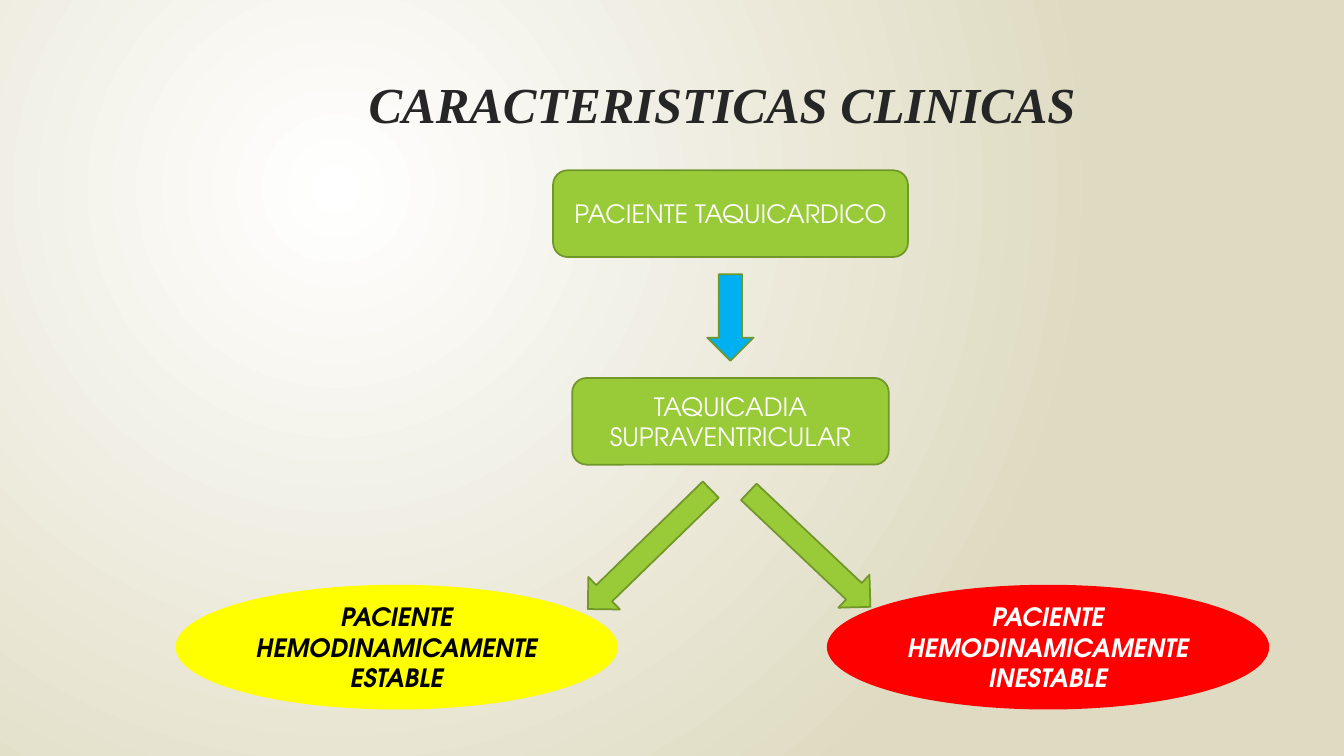
from lxml import etree
from pptx import Presentation
from pptx.dml.color import RGBColor
from pptx.enum.shapes import MSO_SHAPE
from pptx.enum.text import MSO_ANCHOR, PP_ALIGN
from pptx.oxml.ns import qn
from pptx.util import Inches, Pt

WHITE = RGBColor(0xFF, 0xFF, 0xFF)
BLACK = RGBColor(0x00, 0x00, 0x00)
SAND = RGBColor(0xDF, 0xDB, 0xC2)
CHARCOAL = RGBColor(0x26, 0x26, 0x26)
GREEN = RGBColor(0x99, 0xCB, 0x38)
DARK_GREEN = RGBColor(0x71, 0x96, 0x29)
BLUE = RGBColor(0x00, 0xB0, 0xF0)
YELLOW = RGBColor(0xFF, 0xFF, 0x00)
RED = RGBColor(0xFF, 0x00, 0x00)

TITLE_FONT = "Times New Roman"
BODY_FONT = "TeX Gyre Adventor"


def paint_background(page):
    fill = page.background.fill
    fill.gradient()
    for stop, color in zip(fill.gradient_stops, (WHITE, SAND)):
        stop.color.rgb = color
    gradient = page.element.find(".//" + qn("a:gradFill"))
    gradient.remove(gradient.find(qn("a:lin")))
    circle = etree.SubElement(gradient, qn("a:path"), path="circle")
    etree.SubElement(circle, qn("a:fillToRect"),
                     l="50000", t="50000", r="100000", b="100000")


def place(shape, box):
    shape.left, shape.top, shape.width, shape.height = map(Inches, box)


def write(shape, text, font_name, size, color, strong):
    frame = shape.text_frame
    frame.word_wrap = True
    frame.text = text
    para = frame.paragraphs[0]
    para.alignment = PP_ALIGN.CENTER
    para.font.name = font_name
    para.font.size = Pt(size)
    para.font.color.rgb = color
    para.font.bold = para.font.italic = strong


def add_title(page, box, text):
    title = page.shapes.title
    place(title, box)
    write(title, text, TITLE_FONT, 36, CHARCOAL, True)
    title.text_frame.vertical_anchor = MSO_ANCHOR.TOP


def add_figure(page, kind, box, fill, line):
    figure = page.shapes.add_shape(kind, *map(Inches, box))
    figure.shadow.inherit = False
    figure.fill.solid()
    figure.fill.fore_color.rgb = fill
    figure.line.color.rgb = line
    figure.line.width = Pt(1.25)
    return figure


def add_step(page, box, text):
    step = add_figure(page, MSO_SHAPE.ROUNDED_RECTANGLE, box, GREEN, DARK_GREEN)
    write(step, text, BODY_FONT, 18, WHITE, False)
    step.text_frame.vertical_anchor = MSO_ANCHOR.MIDDLE


def add_outcome(page, box, text, fill, color):
    outcome = add_figure(page, MSO_SHAPE.OVAL, box, fill, fill)
    write(outcome, text, BODY_FONT, 18, color, True)
    outcome.text_frame.vertical_anchor = MSO_ANCHOR.MIDDLE


def add_arrow(page, box, fill, rotation=0):
    arrow = add_figure(page, MSO_SHAPE.DOWN_ARROW, box, fill, DARK_GREEN)
    arrow.rotation = rotation


def add_flow(page, box):
    left, top, width, height = box
    center = left + width / 2 + 0.08
    step_height, gap = 0.86, 0.17
    pitch = step_height + gap
    oval_width, oval_height = 4.37, 1.22
    oval_top = top + height - oval_height

    steps = ((3.52, "PACIENTE TAQUICARDICO"), (3.14, "TAQUICADIA SUPRAVENTRICULAR"))
    for index, (step_width, text) in enumerate(steps):
        add_step(page, (center - step_width / 2, top + 2 * index * pitch,
                        step_width, step_height), text)

    add_outcome(page, (left, oval_top, oval_width, oval_height),
                "PACIENTE HEMODINAMICAMENTE ESTABLE", YELLOW, BLACK)
    add_outcome(page, (left + width - oval_width, oval_top, oval_width, oval_height),
                "PACIENTE HEMODINAMICAMENTE INESTABLE", RED, WHITE)

    add_arrow(page, (center - 0.23, top + pitch, 0.46, step_height), BLUE)
    branch_top = top + 2.91
    add_arrow(page, (center - 1.03, branch_top, 0.45, 1.7), GREEN, 45.8)
    add_arrow(page, (center + 0.56, branch_top + 0.02, 0.45, 1.66), GREEN, 313.4)


def main():
    deck = Presentation()
    deck.slide_width, deck.slide_height = Inches(13.33), Inches(7.5)
    page = deck.slides.add_slide(deck.slide_layouts.get_by_name("Title Only"))
    paint_background(page)
    add_title(page, (1.75, 0.68, 10.83, 1.4), "CARACTERISTICAS CLINICAS")
    add_flow(page, (1.75, 1.69, 10.83, 5.34))
    deck.save("out.pptx")


if __name__ == "__main__":
    main()
